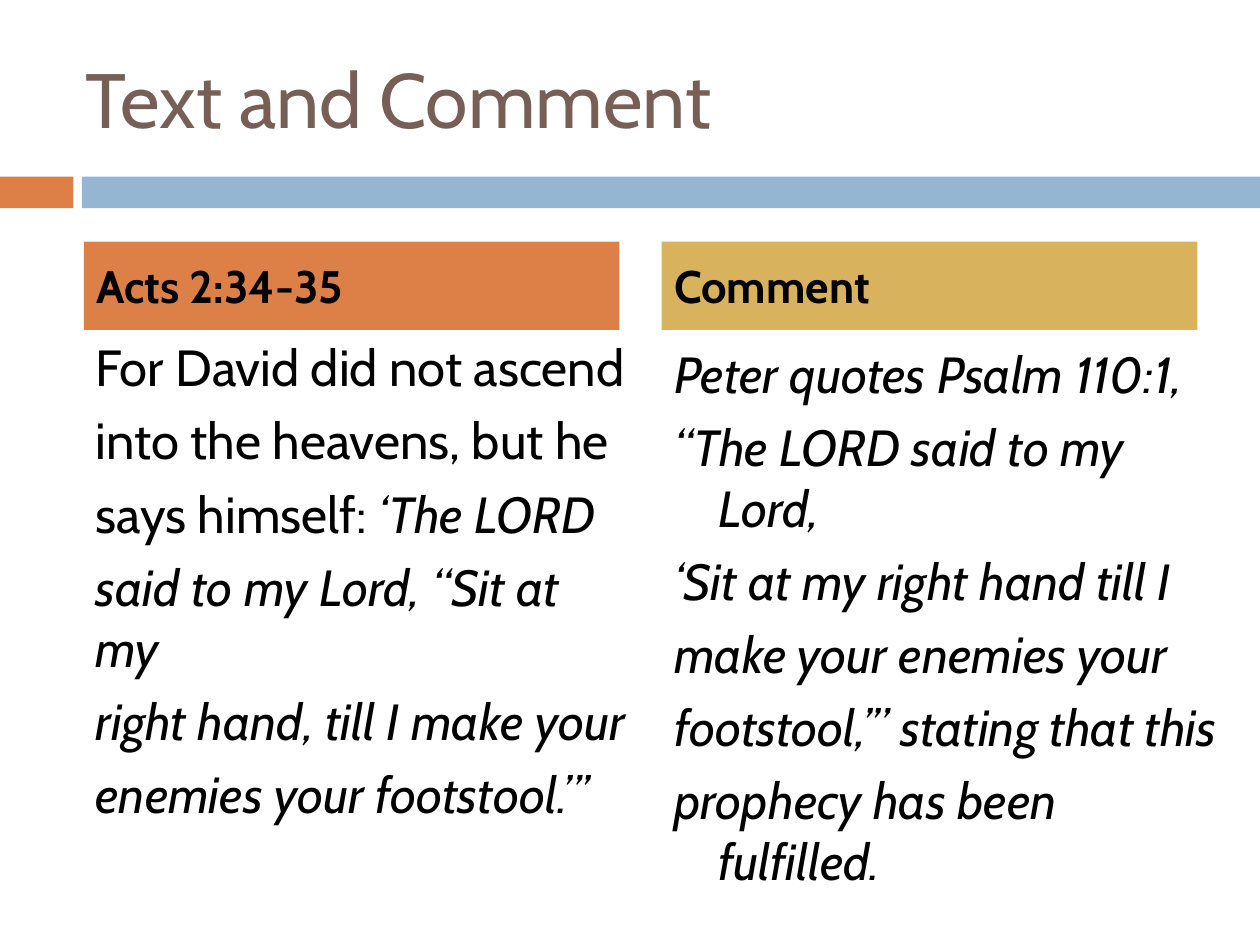
from dataclasses import dataclass
from pptx import Presentation
from pptx.dml.color import RGBColor
from pptx.enum.shapes import MSO_SHAPE
from pptx.enum.text import MSO_ANCHOR, PP_ALIGN
from pptx.util import Cm, Pt


@dataclass(frozen=True)
class Theme:
    font: str = "Cabin"
    ink: str = "000000"
    brown: str = "775F55"
    rust: str = "DD8047"
    blue: str = "94B6D2"
    gold: str = "D8B25C"
    title: int = 44
    head: int = 26
    body: int = 29
    gap: int = 7


class Deck:
    def __init__(self, theme):
        self.theme = theme
        self.prs = Presentation()
        self.prs.slide_width, self.prs.slide_height = Cm(25.4), Cm(19.05)
        self.slide = self.prs.slides.add_slide(self.prs.slide_layouts[6])

    def bar(self, box, color):
        shape = self.slide.shapes.add_shape(MSO_SHAPE.RECTANGLE, *map(Cm, box))
        shape.shadow.inherit = False
        shape.fill.solid()
        shape.fill.fore_color.rgb = RGBColor.from_string(color)
        shape.line.fill.background()
        return shape

    def run(self, para, text, size, color, bold=False, italic=False):
        run = para.add_run()
        run.text = text
        font = run.font
        font.name, font.size = self.theme.font, Pt(size)
        font.bold, font.italic = bold, italic
        font.color.rgb = RGBColor.from_string(color)

    def text(self, box):
        frame = self.slide.shapes.add_textbox(*map(Cm, box)).text_frame
        frame.word_wrap = True
        return frame

    def title(self, box, text):
        frame = self.text(box)
        frame.vertical_anchor = MSO_ANCHOR.MIDDLE
        self.run(frame.paragraphs[0], text, self.theme.title, self.theme.brown)

    def head(self, box, text, color):
        frame = self.bar(box, color).text_frame
        frame.word_wrap = True
        frame.vertical_anchor = MSO_ANCHOR.MIDDLE
        para = frame.paragraphs[0]
        para.alignment = PP_ALIGN.LEFT
        para.space_before = Pt(self.theme.gap)
        self.run(para, text, self.theme.head, self.theme.ink, bold=True)

    def body(self, box, lines, left, hang):
        frame = self.text(box)
        for i, line in enumerate(lines):
            para = frame.add_paragraph() if i else frame.paragraphs[0]
            para.space_before = Pt(self.theme.gap)
            props = para._p.get_or_add_pPr()
            props.set("marL", str(Cm(left)))
            props.set("indent", str(-Cm(hang)))
            for text, italic in line:
                self.run(para, text, self.theme.body, self.theme.ink, italic=italic)

    def save(self):
        self.prs.save("out.pptx")


def main():
    theme = Theme()
    deck = Deck(theme)
    deck.bar((0, 3.56, 1.48, 0.64), theme.rust)
    deck.bar((1.65, 3.56, 23.75, 0.64), theme.blue)
    deck.title((1.48, 0.76, 22.66, 2.41), "Text and Comment")

    verse = [
        [("For David did not ascend", False)],
        [("into the heavens, but he", False)],
        [("says himself: ", False), ("‘The LORD", True)],
        [("said to my Lord, “Sit at my", True)],
        [("right hand, till I make your", True)],
        [("enemies your footstool.”’", True)],
    ]
    notes = [
        "Peter quotes Psalm 110:1,",
        "“The LORD said to my Lord,",
        "‘Sit at my right hand till I",
        "make your enemies your",
        "footstool,’” stating that this",
        "prophecy has been fulfilled.",
    ]
    deck.body((0.79, 6.65, 12.22, 10.97), verse, 0.89, 0)
    deck.body((13.34, 6.78, 11.53, 10.85), [[(note, True)] for note in notes], 0.89, 0.89)

    heads = [(1.69, "Acts 2:34-35", theme.rust), (13.34, "Comment", theme.gold)]
    for left, text, color in heads:
        deck.head((left, 4.87, 10.8, 1.78), text, color)
    deck.save()


if __name__ == "__main__":
    main()
